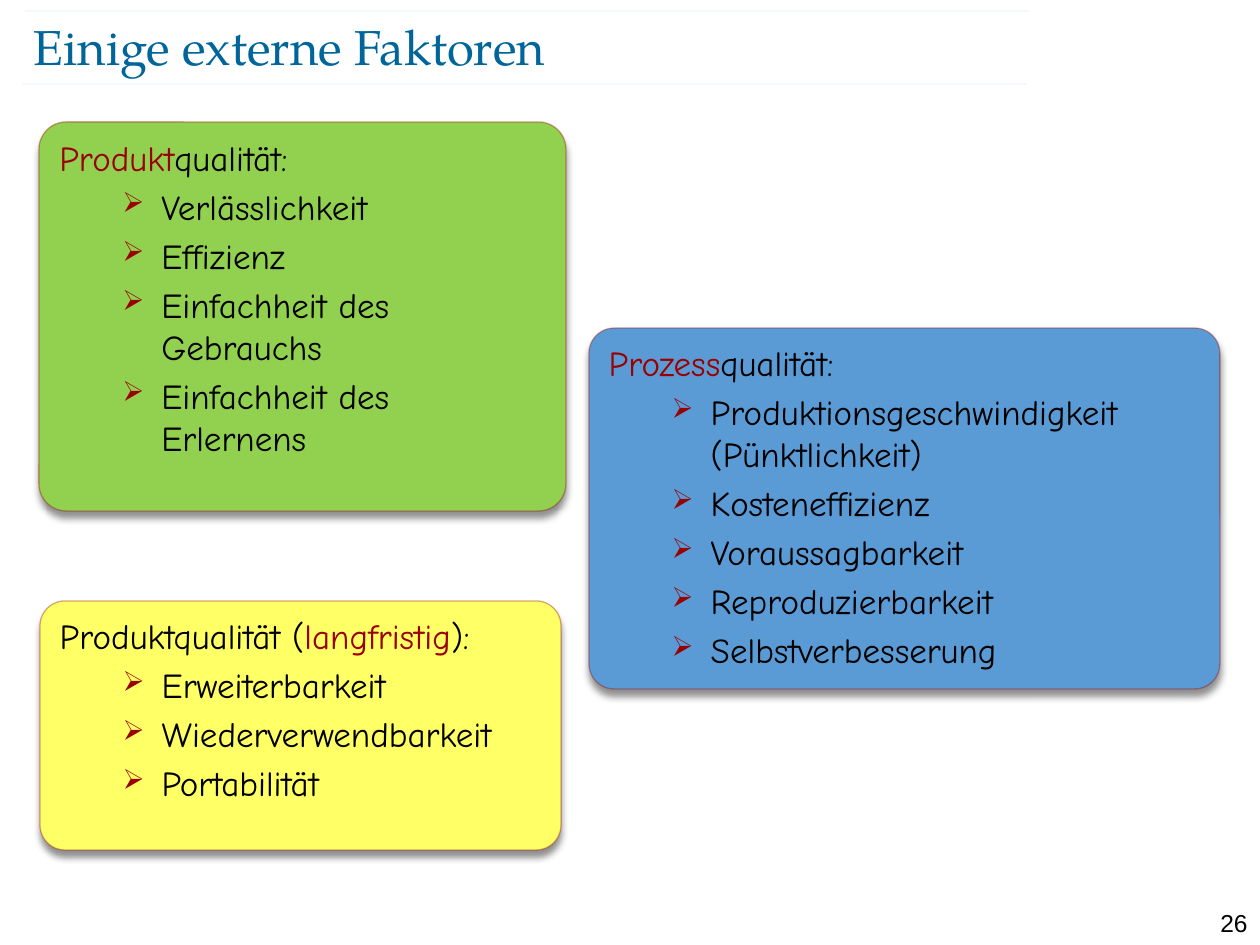
from dataclasses import dataclass

from lxml.etree import SubElement
from pptx import Presentation
from pptx.dml.color import RGBColor as RGB
from pptx.enum.shapes import MSO_CONNECTOR as Connector, MSO_SHAPE as Shape
from pptx.enum.text import MSO_ANCHOR as Anchor, PP_ALIGN as Align
from pptx.oxml.ns import qn
from pptx.util import Pt

EMU_PER_PX = 914400 / 126


@dataclass(frozen=True)
class Theme:
    heading: str = "006699"
    accent: str = "990000"
    text: str = "000000"
    green: str = "92D050"
    yellow: str = "FFFF66"
    blue: str = "5B9BD5"
    title_font: str = "TeX Gyre Pagella"
    body_font: str = "Comic Neue"
    number_font: str = "Arial"
    title_size: int = 28
    body_size: int = 20
    number_size: int = 14


THEME = Theme()


def px(length):
    return round(length * EMU_PER_PX)


def set_font(font, name, size, color=None):
    font.name, font.size = name, Pt(size)
    if color:
        font.color.rgb = RGB.from_string(color)


def set_line(line, color, width, opacity):
    line.color.rgb = RGB.from_string(color)
    line.width = Pt(width)
    rgb = line._get_or_add_ln().find(".//" + qn("a:srgbClr"))
    SubElement(rgb, qn("a:alpha"), val=str(opacity * 1000))


def add_shadow(shape):
    shape.shadow.inherit = False
    effects = shape._element.spPr.find(qn("a:effectLst"))
    outer = SubElement(effects, qn("a:outerShdw"), blurRad=str(Pt(4)),
                       dist=str(Pt(4)), dir="5400000", rotWithShape="0")
    black = SubElement(outer, qn("a:srgbClr"), val="000000")
    SubElement(black, qn("a:alpha"), val="43000")


def add_bullet(paragraph):
    props = paragraph._p.get_or_add_pPr()
    props.set("marL", str(px(102)))
    props.set("indent", str(px(-39)))
    color = SubElement(props, qn("a:buClr"))
    SubElement(color, qn("a:srgbClr"), val=THEME.accent)
    SubElement(props, qn("a:buSzPct"), val="80000")
    SubElement(props, qn("a:buChar"), char="➢")


def add_header(slide, left, top, width, height):
    # Hairlines above and below the title
    for x, y in ((left + 2, top), (left, top + height)):
        rule = slide.shapes.add_connector(
            Connector.STRAIGHT, px(x), px(y), px(x + width), px(y))
        set_line(rule.line, THEME.heading, 0.1, 35)
        SubElement(rule._element.spPr, qn("a:effectLst"))

    # Title
    title = slide.shapes.title
    title.left, title.top = px(left + 11), px(top + 5)
    title.width, title.height = px(1095), px(60)
    frame = title.text_frame
    frame.margin_left = frame.margin_right = 0
    frame.margin_top = frame.margin_bottom = 0
    frame.vertical_anchor = Anchor.MIDDLE
    frame.text = "Einige externe Faktoren"
    heading = frame.paragraphs[0]
    heading.alignment = Align.LEFT
    set_font(heading.font, THEME.title_font, THEME.title_size, THEME.heading)


def add_quality_card(slide, box, fill, heading, factors):
    """Heading is a list of (text, color) parts; factors become bullets."""
    left, top, width, height = map(px, box)
    card = slide.shapes.add_shape(
        Shape.ROUNDED_RECTANGLE, left, top, width, height)
    card.adjustments[0] = round(26 / box[3], 2)
    card.fill.solid()
    card.fill.fore_color.rgb = RGB.from_string(fill)
    set_line(card.line, THEME.accent, 0.75, 34)
    add_shadow(card)

    frame = card.text_frame
    frame.word_wrap = True
    frame.vertical_anchor = Anchor.TOP
    frame.margin_right = px(16)

    # Heading with its accented word
    headline = frame.paragraphs[0]
    headline.alignment = Align.LEFT
    set_font(headline.font, THEME.body_font, THEME.body_size)
    for text, color in heading:
        part = headline.add_run()
        part.text = text
        part.font.color.rgb = RGB.from_string(color)

    # Factors
    for factor in factors:
        item = frame.add_paragraph()
        item.text = factor
        item.level = 1
        item.alignment = Align.LEFT
        item.space_before = Pt(4)
        add_bullet(item)
        set_font(item.font, THEME.body_font, THEME.body_size, THEME.text)


def add_page_number(slide, left, top, width, height):
    number = slide.shapes.add_textbox(
        px(left), px(top), px(width), px(height))
    frame = number.text_frame
    frame.word_wrap = True
    frame.text = "26"
    digits = frame.paragraphs[0]
    digits.alignment = Align.RIGHT
    set_font(digits.font, THEME.number_font, THEME.number_size, THEME.text)


def main():
    deck = Presentation()
    deck.slide_width, deck.slide_height = px(1260), px(945)
    slide = deck.slides.add_slide(deck.slide_layouts[5])

    add_header(slide, 23, 11, 1004, 73)
    add_quality_card(
        slide, (589, 328, 631, 361), THEME.blue,
        [("Prozess", THEME.accent), ("qualität:", THEME.text)],
        ["Produktionsgeschwindigkeit (Pünktlichkeit)", "Kosteneffizienz",
         "Voraussagbarkeit", "Reproduzierbarkeit", "Selbstverbesserung"])
    add_quality_card(
        slide, (40, 601, 521, 249), THEME.yellow,
        [("Produktqualität (", THEME.text), ("langfristig", THEME.accent),
         ("):", THEME.text)],
        ["Erweiterbarkeit", "Wiederverwendbarkeit", "Portabilität"])
    add_quality_card(
        slide, (39, 122, 527, 389), THEME.green,
        [("Produkt", THEME.accent), ("qualität:", THEME.text)],
        ["Verlässlichkeit", "Effizienz", "Einfachheit des Gebrauchs",
         "Einfachheit des Erlernens"])
    add_page_number(slide, 1191, 902, 69, 30)

    deck.save("out.pptx")


if __name__ == "__main__":
    main()
